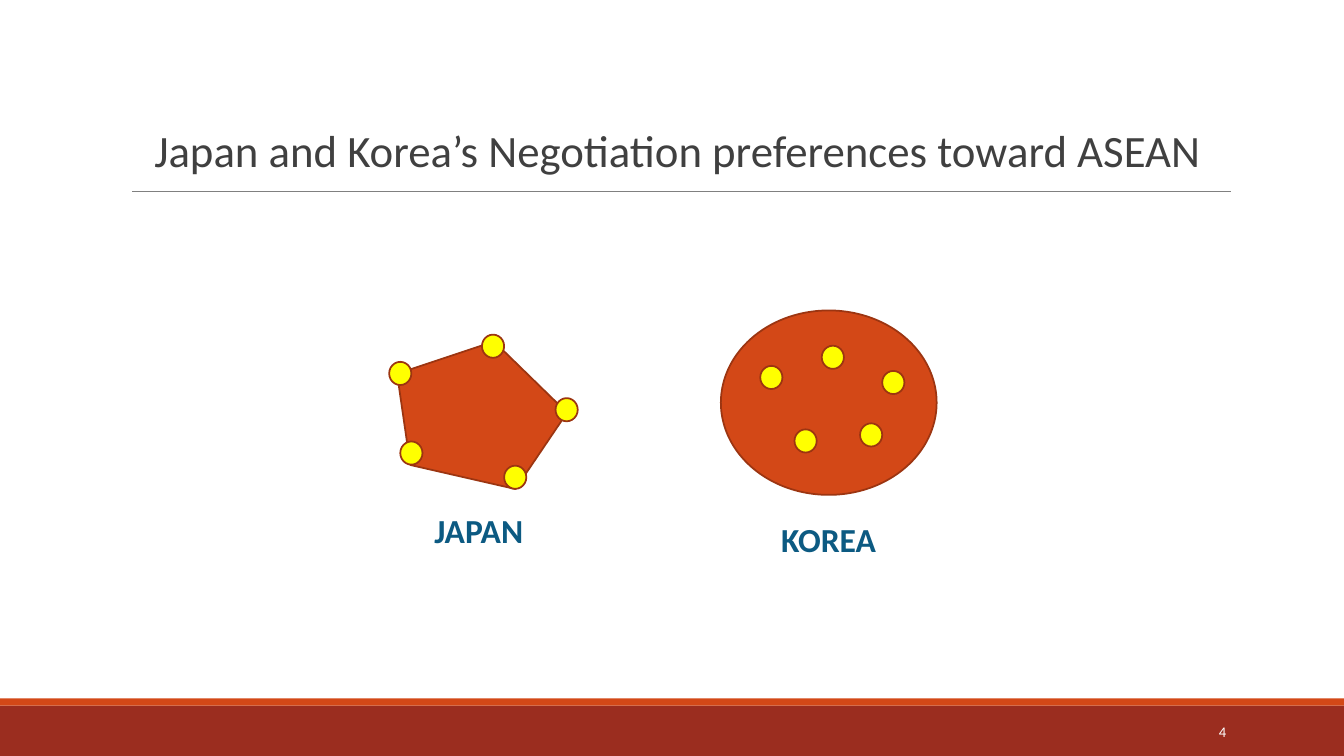
from dataclasses import dataclass

from lxml.etree import SubElement
from pptx import Presentation
from pptx.dml.color import RGBColor
from pptx.enum.shapes import MSO_CONNECTOR, MSO_SHAPE
from pptx.enum.text import MSO_ANCHOR, MSO_AUTO_SIZE, PP_ALIGN
from pptx.oxml.ns import qn
from pptx.util import Inches, Pt


@dataclass(frozen=True)
class Theme:
    font: str = "Calibri"
    orange: str = "D34817"
    outline: str = "9C3511"
    brick: str = "9B2D1F"
    yellow: str = "FFFF00"
    blue: str = "0C5A82"
    dark: str = "404040"
    grey: str = "808080"
    white: str = "FFFFFF"
    title_size: float = 32
    label_size: float = 24
    number_size: float = 10.5
    outline_width: float = 1.25
    rule_width: float = 0.5


THEME = Theme()


def color(value):
    return RGBColor.from_string(value)


def add_filled(s, kind, box, fill, line=None):
    sp = s.shapes.add_shape(kind, *map(Inches, box))
    sp.shadow.inherit = False
    sp.fill.solid()
    sp.fill.fore_color.rgb = color(fill)
    if line:
        sp.line.color.rgb = color(line)
        sp.line.width = Pt(THEME.outline_width)
    else:
        sp.line.fill.background()
    return sp


def write(sp, text, size, rgb, align=PP_ALIGN.LEFT, bold=False):
    tf = sp.text_frame
    tf.text = text
    p = tf.paragraphs[0]
    p.alignment = align
    font = p.runs[0].font
    font.name = THEME.font
    font.size = Pt(size)
    font.bold = bold
    font.color.rgb = color(rgb)
    return tf


def add_title(s, box, text):
    left, top, width, height = box
    sp = s.shapes.title
    sp.left, sp.top, sp.width, sp.height = map(Inches, box)
    tf = write(sp, text, THEME.title_size, THEME.dark)
    tf.margin_left = tf.margin_right = 0
    tf.vertical_anchor = MSO_ANCHOR.TOP
    tf.auto_size = MSO_AUTO_SIZE.NONE
    tf.word_wrap = True
    tf.paragraphs[0].line_spacing = 0.9

    y = Inches(top + 0.67)
    rule = s.shapes.add_connector(
        MSO_CONNECTOR.STRAIGHT, Inches(left - 0.22), y, Inches(left + 10.68), y)
    rule.line.color.rgb = color(THEME.grey)
    rule.line.width = Pt(THEME.rule_width)
    SubElement(rule._element.spPr, qn("a:effectLst"))


def add_country(s, box, kind, rotation, dots, name, label_box):
    left, top, width, height = box
    body = add_filled(s, kind, box, THEME.orange, THEME.outline)
    body.rotation = rotation
    for dx, dy in dots:
        add_filled(s, MSO_SHAPE.OVAL, (left + dx, top + dy, 0.22, 0.23),
                   THEME.yellow, THEME.outline)
    dx, dy, label_width, label_height = label_box
    label = s.shapes.add_textbox(
        *map(Inches, (left + dx, top + dy, label_width, label_height)))
    tf = write(label, name, THEME.label_size, THEME.blue, bold=True)
    tf.word_wrap = False


def add_footer(s, box, number):
    left, top, width, height = box
    add_filled(s, MSO_SHAPE.RECTANGLE, (left, top + 0.07, width, height - 0.07),
               THEME.brick)
    add_filled(s, MSO_SHAPE.RECTANGLE, (left, top, width, 0.07), THEME.orange)
    sp = s.shapes.add_textbox(
        *map(Inches, (left + width - 2.5, top + 0.13, 1.43, 0.4)))
    tf = write(sp, number, THEME.number_size, THEME.white, PP_ALIGN.RIGHT)
    tf.word_wrap = True
    tf.vertical_anchor = MSO_ANCHOR.MIDDLE


def main():
    prs = Presentation()
    prs.slide_width, prs.slide_height = Inches(13.33), Inches(7.5)
    s = prs.slides.add_slide(prs.slide_layouts[5])
    add_footer(s, (0, 6.93, 13.33, 0.57), "4")
    add_title(s, (1.53, 1.23, 10.97, 0.74),
              "Japan and Korea’s Negotiation preferences toward ASEAN")
    add_country(
        s, (3.88, 3.37, 1.73, 1.38), MSO_SHAPE.REGULAR_PENTAGON, 12.9,
        [(-0.02, 0.22), (1.12, 1.25), (1.63, 0.58), (0.9, -0.05), (0.09, 1.01)],
        "JAPAN", (0.33, 1.64, 1.09, 0.5))
    add_country(
        s, (7.15, 3.08, 2.14, 1.83), MSO_SHAPE.OVAL, 0,
        [(1.6, 0.6), (1.38, 1.12), (0.73, 1.18), (1, 0.35), (0.39, 0.55)],
        "KOREA", (0.5, 2.02, 1.15, 0.5))
    prs.save("out.pptx")


if __name__ == "__main__":
    main()
